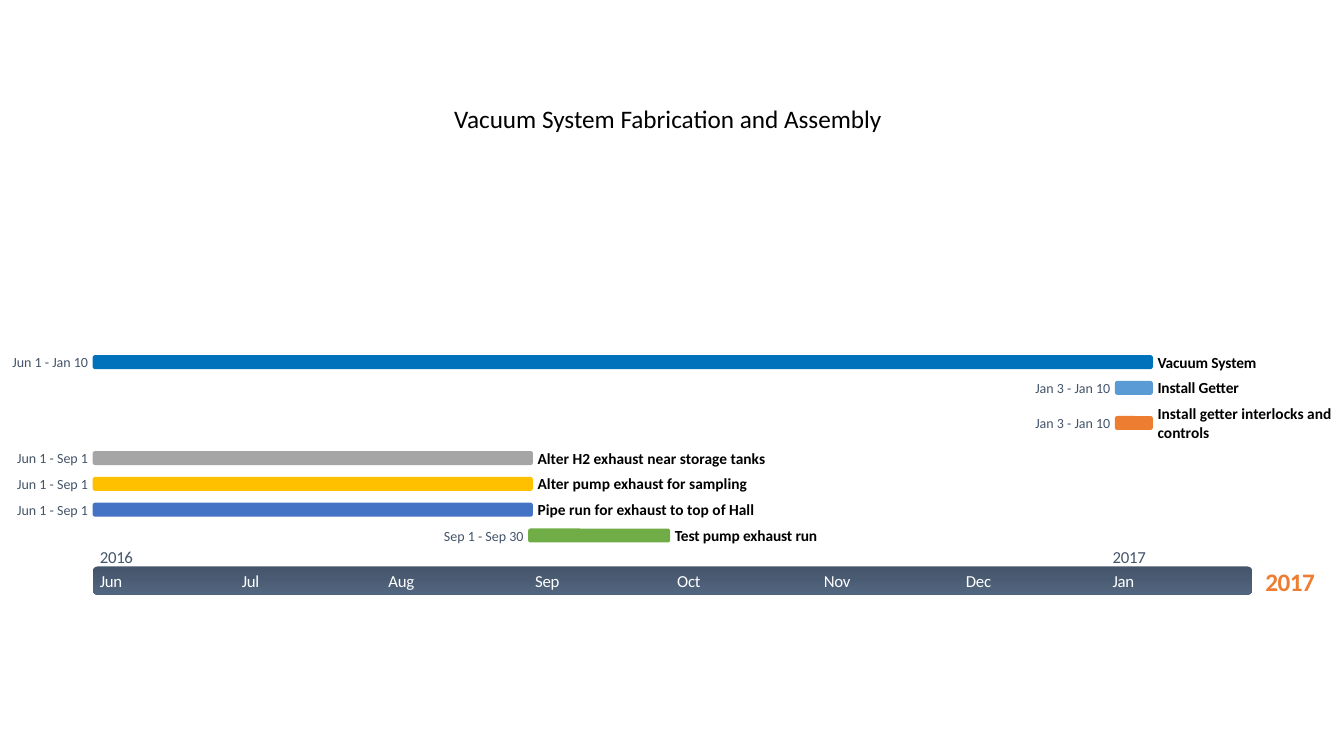
"""Builds the vacuum system fabrication timeline slide."""
import dataclasses
import itertools

import pptx
import pptx.dml.color
import pptx.enum.shapes
import pptx.enum.text
import pptx.util

ALIGN = pptx.enum.text.PP_ALIGN
ANCHOR = pptx.enum.text.MSO_ANCHOR


@dataclasses.dataclass(frozen=True)
class Theme:
    """Fonts, colours and type sizes."""
    font: str = "Calibri"
    ink: str = "000000"
    slate: str = "44546A"
    slate_light: str = "52667F"
    white: str = "FFFFFF"
    accent: str = "ED7D31"
    large: int = 18
    scale: int = 12
    label: int = 11
    dates: int = 10


@dataclasses.dataclass(frozen=True)
class Grid:
    """One column per day and one row per task, in inches."""
    left: float = 0.92
    top: float = 3.5
    day: float = 11.5 / 245
    row: float = 0.256

    def box(self, column, row, columns, rows):
        """Return left, top, width and height of a block of cells."""
        return [pptx.util.Inches(length) for length in (
            self.left + column * self.day, self.top + row * self.row,
            columns * self.day, rows * self.row)]


@dataclasses.dataclass(frozen=True)
class Task:
    """A bar with its first and last day."""
    name: str
    start: str
    end: str
    color: str
    label_days: float
    lines: int = 1
    spacing: float = 0


THEME = Theme()
GRID = Grid()
WIDTH, HEIGHT = pptx.util.Inches(13.33), pptx.util.Inches(7.5)
MONTH_DAYS = {"Jun": 30, "Jul": 31, "Aug": 31, "Sep": 30,
              "Oct": 31, "Nov": 30, "Dec": 31, "Jan": 31}
MONTH_STARTS = dict(zip(MONTH_DAYS, itertools.accumulate(MONTH_DAYS.values(), initial=0)))
YEARS = {"2016": "Jun", "2017": "Jan"}
TOTAL_DAYS = sum(MONTH_DAYS.values())
YEAR_ROW, AXIS_ROW, AXIS_ROWS = 7.5, 8.28, 1.09
LINE_ROWS, BAR_ROWS = 0.72, 0.54
TASKS = [
    Task("Vacuum System", "Jun 1", "Jan 10", "0072BC", 23, spacing=-0.1),
    Task("Install Getter", "Jan 3", "Jan 10", "5B9BD5", 20, spacing=-0.1),
    Task("Install getter interlocks and controls", "Jan 3", "Jan 10", "ED7D31", 37.5, 2),
    Task("Alter H2 exhaust near storage tanks", "Jun 1", "Sep 1", "A5A5A5", 52),
    Task("Alter pump exhaust for sampling", "Jun 1", "Sep 1", "FFC000", 48),
    Task("Pipe run for exhaust to top of Hall", "Jun 1", "Sep 1", "4472C4", 49),
    Task("Test pump exhaust run", "Sep 1", "Sep 30", "70AD47", 34, spacing=-0.1),
]


def rgb(color):
    """Turn a hex string into a colour."""
    return pptx.dml.color.RGBColor.from_string(color)


def day_of(date):
    """Return the number of days from the start of the timeline."""
    month, day = date.split()
    return MONTH_STARTS[month] + int(day) - 1


def format_text(frame, text, size, color, bold=False, align=ALIGN.LEFT, spacing=0):
    """Fill a text frame with one formatted paragraph."""
    frame.text = text
    paragraph = frame.paragraphs[0]
    paragraph.alignment = align
    for run in paragraph.runs:
        run.font.name = THEME.font
        run.font.size = pptx.util.Pt(size)
        run.font.bold = bold
        run.font.color.rgb = rgb(color)
        if spacing:
            run._r.get_or_add_rPr().set("spc", str(round(spacing * 100)))


def add_label(slide, box, text, size, color, **style):
    """Add a wrapping text box without margins."""
    frame = slide.shapes.add_textbox(*box).text_frame
    frame.margin_left = frame.margin_right = frame.margin_top = frame.margin_bottom = 0
    frame.word_wrap = True
    frame.vertical_anchor = ANCHOR.MIDDLE
    format_text(frame, text, size, color, **style)


def add_bar(slide, box):
    """Add a rounded bar without line or shadow."""
    bar = slide.shapes.add_shape(pptx.enum.shapes.MSO_SHAPE.ROUNDED_RECTANGLE, *box)
    bar.shadow.inherit = False
    bar.line.fill.background()
    return bar


def add_title(slide, text):
    """Place and format the title placeholder."""
    title = slide.shapes.title
    title.left, title.top = round(WIDTH * 0.193), round(HEIGHT * 0.13)
    title.width, title.height = round(WIDTH * 0.608), round(HEIGHT * 0.053)
    frame = title.text_frame
    frame.auto_size = pptx.enum.text.MSO_AUTO_SIZE.NONE
    frame.vertical_anchor = ANCHOR.TOP
    format_text(frame, text, THEME.large, THEME.ink, align=ALIGN.CENTER)


def add_axis(slide):
    """Add the month band with its months and years."""
    fill = add_bar(slide, GRID.box(0, AXIS_ROW, TOTAL_DAYS, AXIS_ROWS)).fill
    fill.gradient()
    fill.gradient_angle = 270
    for stop, color in zip(fill.gradient_stops, (THEME.slate, THEME.slate_light)):
        stop.color.rgb = rgb(color)
    for month, start in list(MONTH_STARTS.items()):
        add_label(slide, GRID.box(start + 1.5, AXIS_ROW, 10, AXIS_ROWS),
                  month, THEME.scale, THEME.white, spacing=-0.2)
    for year, month in YEARS.items():
        add_label(slide, GRID.box(MONTH_STARTS[month] + 1.5, YEAR_ROW, 10, 0.78),
                  year, THEME.scale, THEME.slate, spacing=-0.2)
    add_label(slide, GRID.box(TOTAL_DAYS + 2, AXIS_ROW, 12, 1.15), "2017",
              THEME.large, THEME.accent, bold=True, align=ALIGN.CENTER, spacing=-0.4)


def add_task(slide, task, row):
    """Add a task's bar, dates and name, and return the next free row."""
    start, end = day_of(task.start), day_of(task.end) + 1
    rows = task.lines * LINE_ROWS
    bar = add_bar(slide, GRID.box(start, row + (rows - BAR_ROWS) / 2, end - start, BAR_ROWS))
    bar.fill.solid()
    bar.fill.fore_color.rgb = rgb(task.color)
    add_label(slide, GRID.box(start - 19, row, 18, rows), f"{task.start} - {task.end}",
              THEME.dates, THEME.slate, align=ALIGN.RIGHT)
    add_label(slide, GRID.box(end + 1, row, task.label_days, rows), task.name,
              THEME.label, THEME.ink, bold=True, spacing=task.spacing)
    return row + rows + 1 - LINE_ROWS


def main():
    """Build and save the slide."""
    presentation = pptx.Presentation()
    presentation.slide_width, presentation.slide_height = WIDTH, HEIGHT
    slide = presentation.slides.add_slide(presentation.slide_layouts[5])
    add_title(slide, "Vacuum System Fabrication and Assembly")
    add_axis(slide)
    row = 0
    for task in TASKS:
        row = add_task(slide, task, row)
    presentation.save("out.pptx")


if __name__ == "__main__":
    main()
